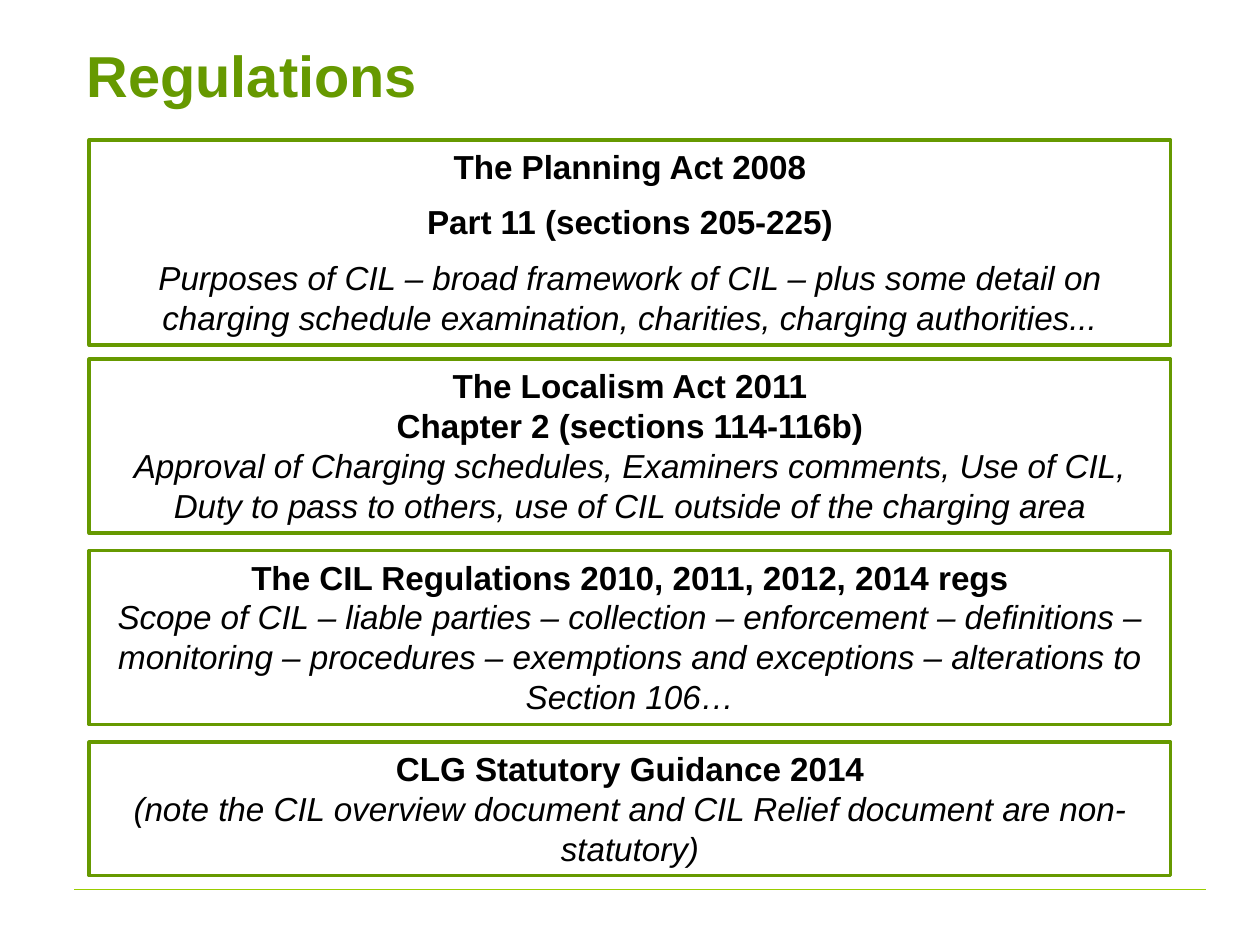
from lxml.etree import SubElement
from pptx import Presentation
from pptx.dml.color import RGBColor
from pptx.enum.shapes import MSO_CONNECTOR, MSO_SHAPE
from pptx.enum.text import MSO_ANCHOR, MSO_AUTO_SIZE, PP_ALIGN
from pptx.oxml.ns import qn
from pptx.util import Cm, Pt

GREEN, LIME, BLACK, WHITE = "669900", "99CC00", "000000", "FFFFFF"
LEFT, WIDTH = 1.8, 21.8

# top, height, paragraph spacing, bold headings, italic description
SOURCES = [
    (2.82, 4.14, 4.5, ["The Planning Act 2008", "Part 11 (sections 205-225)"],
     "Purposes of CIL – broad framework of CIL – plus some detail on "
     "charging schedule examination, charities, charging authorities..."),
    (7.24, 3.51, 0, ["The Localism Act 2011", "Chapter 2 (sections 114-116b)"],
     "Approval of Charging schedules, Examiners comments, Use of CIL, "
     "Duty to pass to others, use of CIL outside of the charging area"),
    (11.1, 3.51, 0, ["The CIL Regulations 2010, 2011, 2012, 2014 regs"],
     "Scope of CIL – liable parties – collection – enforcement – definitions – "
     "monitoring – procedures – exemptions and exceptions – alterations to "
     "Section 106…"),
    (14.96, 2.69, 0, ["CLG Statutory Guidance 2014"],
     "(note the CIL overview document and CIL Relief document are non-statutory)"),
]


def color(code):
    return RGBColor.from_string(code)


class SlideBuilder:
    font = "Arial"
    title_size = Pt(33)
    body_size = Pt(19)

    def __init__(self, page):
        self.page = page

    def span(self, para, text, size, code, bold=False, italic=False):
        span = para.add_run()
        span.text = text
        span.font.name = self.font
        span.font.size = size
        span.font.bold = bold
        span.font.italic = italic
        span.font.color.rgb = color(code)

    def rule(self, left, right, y):
        line = self.page.shapes.add_connector(
            MSO_CONNECTOR.STRAIGHT, Cm(left), Cm(y), Cm(right), Cm(y))
        line.line.color.rgb = color(LIME)
        line.line.width = Pt(0.75)
        SubElement(line._element.spPr, qn("a:effectLst"))

    def title(self, text, left, top, width, height):
        box = self.page.shapes.add_textbox(Cm(left), Cm(top), Cm(width), Cm(height))
        frame = box.text_frame
        frame.word_wrap = True
        frame.vertical_anchor = MSO_ANCHOR.MIDDLE
        self.span(frame.paragraphs[0], text, self.title_size, GREEN, bold=True)

    def panel(self, top, height, spacing, headings, description):
        """Add a green-framed box with bold headings above an italic description."""
        box = self.page.shapes.add_shape(
            MSO_SHAPE.RECTANGLE, Cm(LEFT), Cm(top), Cm(WIDTH), Cm(height))
        box.shadow.inherit = False
        box.fill.solid()
        box.fill.fore_color.rgb = color(WHITE)
        fill_color = box._element.spPr.find(qn("a:solidFill"))[0]
        SubElement(fill_color, qn("a:alpha"), val="20000")
        box.line.color.rgb = color(GREEN)
        box.line.width = Pt(2)

        frame = box.text_frame
        frame.word_wrap = True
        frame.auto_size = MSO_AUTO_SIZE.SHAPE_TO_FIT_TEXT
        frame.vertical_anchor = MSO_ANCHOR.TOP
        for index, text in enumerate([*headings, description]):
            para = frame.add_paragraph() if index else frame.paragraphs[0]
            para.alignment = PP_ALIGN.CENTER
            para.space_before = para.space_after = Pt(spacing)
            heading = index < len(headings)
            self.span(para, text, self.body_size, BLACK, bold=heading, italic=not heading)


def main():
    deck = Presentation()
    deck.slide_width, deck.slide_height = Cm(25.4), Cm(19.05)
    builder = SlideBuilder(deck.slides.add_slide(deck.slide_layouts[6]))
    builder.rule(1.5, 24.31, 17.93)
    builder.title("Regulations", 1.5, 0.76, 22.86, 1.47)
    for source in SOURCES:
        builder.panel(*source)
    deck.save("out.pptx")


if __name__ == "__main__":
    main()
